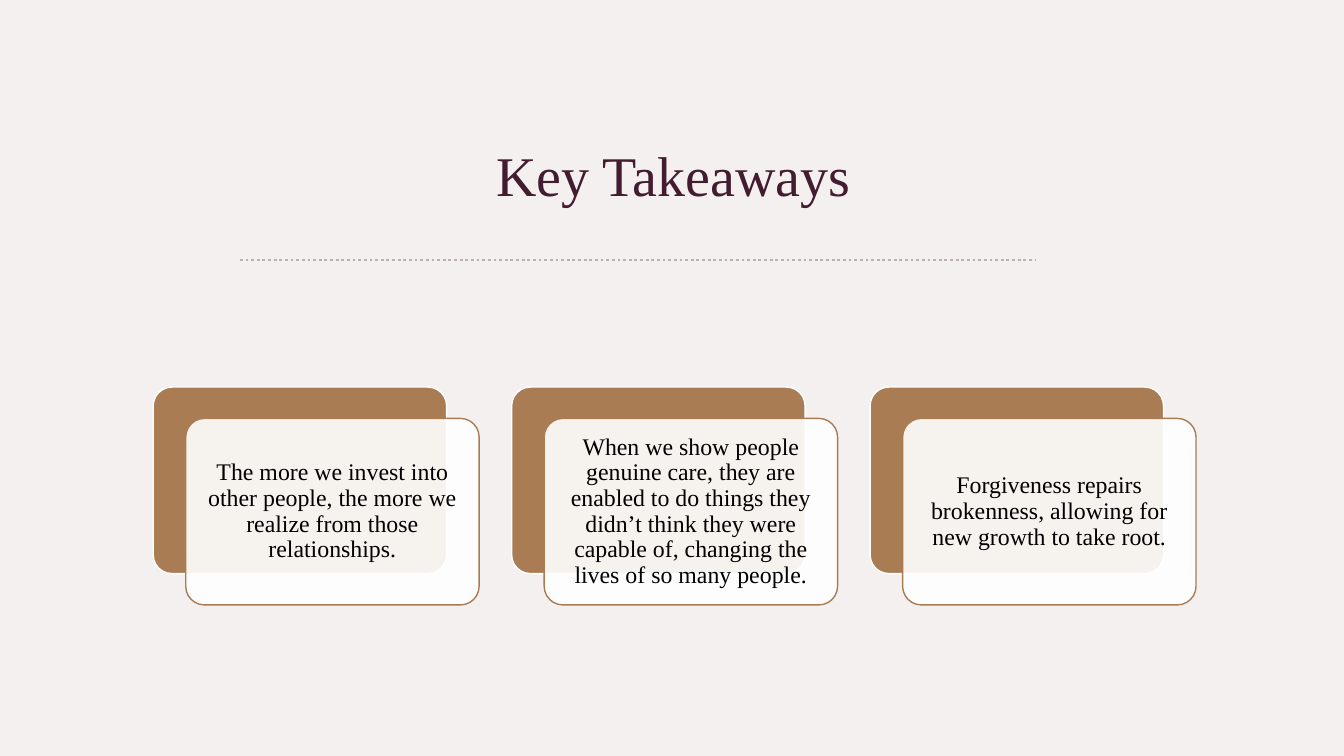
from lxml import etree
from pptx import Presentation
from pptx.dml.color import RGBColor
from pptx.enum.dml import MSO_LINE
from pptx.enum.shapes import MSO_CONNECTOR, MSO_SHAPE
from pptx.enum.text import MSO_ANCHOR, PP_ALIGN
from pptx.oxml.ns import qn
from pptx.util import Inches, Pt

ROUNDED = MSO_SHAPE.ROUNDED_RECTANGLE
STRAIGHT = MSO_CONNECTOR.STRAIGHT
DOTTED = MSO_LINE.ROUND_DOT
MIDDLE = MSO_ANCHOR.MIDDLE
CENTER = PP_ALIGN.CENTER

TAKEAWAYS = [
    "The more we invest into other people, the more we realize from those relationships.",
    "When we show people genuine care, they are enabled to do things they didn’t think "
    "they were capable of, changing the lives of so many people.",
    "Forgiveness repairs brokenness, allowing for new growth to take root.",
]


def rgb(hex_colour):
    return RGBColor.from_string(hex_colour)


def write(frame, text, size=17, colour="000000", font="Times New Roman", spacing=1.0, inset=0.1):
    frame.word_wrap = True
    frame.vertical_anchor = MIDDLE
    frame.margin_left = frame.margin_right = Inches(inset)
    frame.margin_top = frame.margin_bottom = Inches(inset)
    paragraph = frame.paragraphs[0]
    paragraph.text = text
    paragraph.alignment = CENTER
    paragraph.line_spacing = spacing
    paragraph.font.name = font
    paragraph.font.size = Pt(size)
    paragraph.font.color.rgb = rgb(colour)


class Canvas:
    """Style and current slide, with lengths in percent of the slide's size."""

    paper, plum, bronze, rule_grey, white = "F3F0EF", "431C30", "A97C54", "BFAFAA", "FFFFFF"

    def __init__(self, deck):
        self.width, self.height = deck.slide_width, deck.slide_height
        self.slide = deck.slides.add_slide(deck.slide_layouts[6])
        background = self.slide.background.fill
        background.solid()
        background.fore_color.rgb = rgb(self.paper)

    def x(self, share):
        return round(self.width * share / 100)

    def y(self, share):
        return round(self.height * share / 100)

    def box(self, left, top, width, height):
        return self.x(left), self.y(top), self.x(width), self.y(height)

    def title(self, text, *place):
        heading = self.slide.shapes.add_textbox(*self.box(*place))
        write(heading.text_frame, text, size=40, colour=self.plum)

    def divider(self, left, right, top):
        rule = self.slide.shapes.add_connector(
            STRAIGHT, self.x(left), self.y(top), self.x(right), self.y(top))
        rule.line.color.rgb = rgb(self.rule_grey)
        rule.line.width = Pt(2)
        rule.line.dash_style = DOTTED
        etree.SubElement(rule._element.spPr, qn("a:effectLst"))

    def panel(self, place, fill, outline, opacity=100):
        panel = self.slide.shapes.add_shape(ROUNDED, *self.box(*place))
        panel.shadow.inherit = False
        panel.adjustments[0] = 0.1
        panel.fill.solid()
        panel.fill.fore_color.rgb = rgb(fill)
        panel.line.color.rgb = rgb(outline)
        panel.line.width = Pt(1)
        if opacity < 100:
            colour = panel._element.spPr.find(qn("a:solidFill"))[0]
            etree.SubElement(colour, qn("a:alpha"), val=str(opacity * 1000))
        return panel

    def card(self, text, left, top, width, height, shift_x=2.42, shift_y=4.15):
        self.panel((left, top, width, height), self.bronze, self.white)
        front = self.panel((left + shift_x, top + shift_y, width, height),
                           self.white, self.bronze, opacity=90)
        write(front.text_frame, text, spacing=0.9, inset=0.07)


def main():
    deck = Presentation()
    deck.slide_width, deck.slide_height = Inches(13.33), Inches(7.5)
    canvas = Canvas(deck)
    canvas.title("Key Takeaways", 7.88, 13.73, 84.4, 18.67)
    canvas.divider(17.85, 77.04, 34.4)
    for column, takeaway in enumerate(TAKEAWAYS):
        canvas.card(takeaway, 11.4 + column * 26.67, 51.2, 21.83, 24.67)
    deck.save("out.pptx")


if __name__ == "__main__":
    main()
